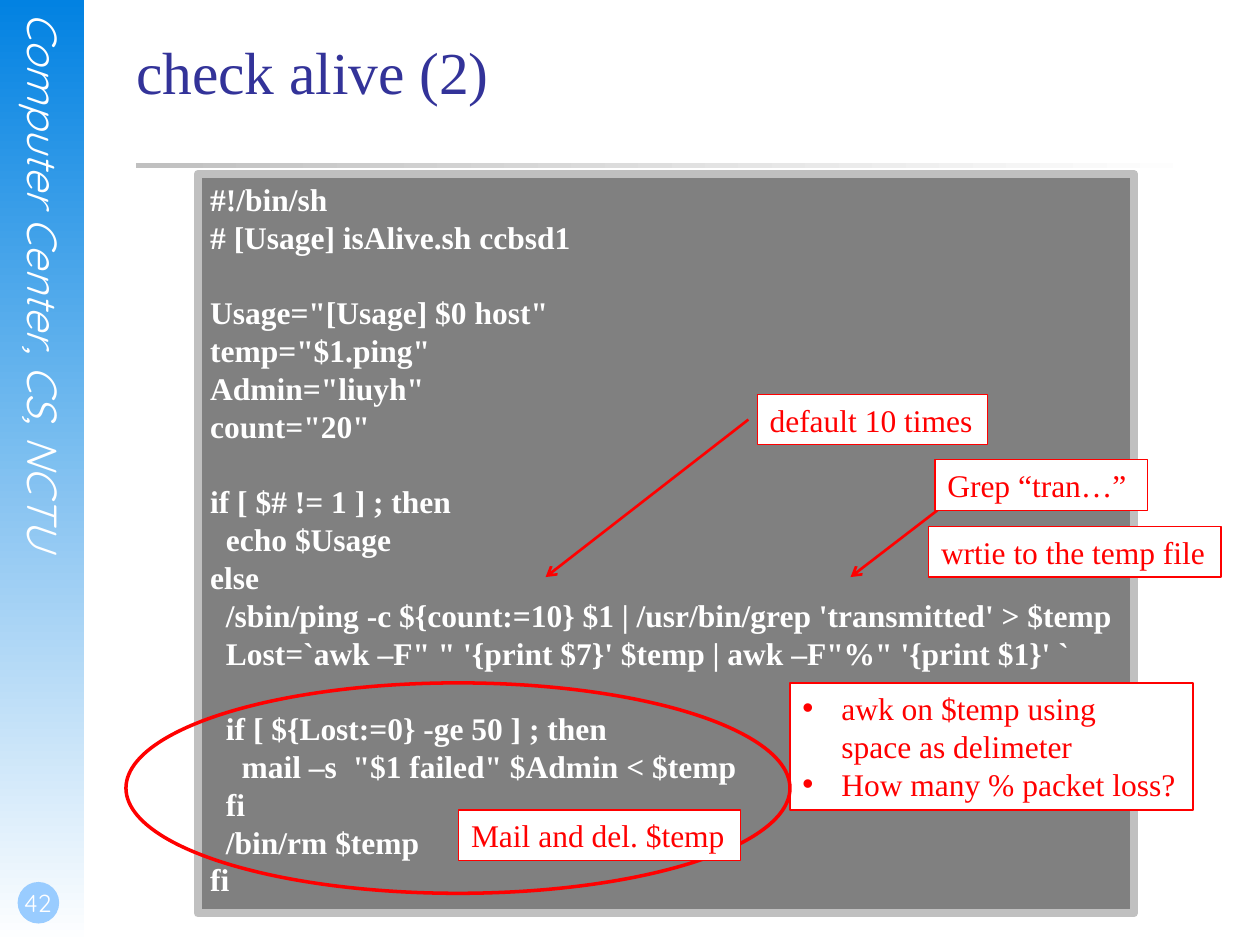
from lxml.etree import SubElement
from pptx import Presentation
from pptx.dml.color import RGBColor
from pptx.enum.shapes import MSO_CONNECTOR, MSO_SHAPE
from pptx.enum.text import MSO_ANCHOR, PP_ALIGN
from pptx.oxml.ns import qn
from pptx.util import Inches, Pt

WHITE = RGBColor(0xFF, 0xFF, 0xFF)
RED = RGBColor(0xFF, 0x00, 0x00)
BLUE = RGBColor(0x02, 0x82, 0xE2)
PALE_BLUE = RGBColor(0x99, 0xCC, 0xFF)
NAVY = RGBColor(0x33, 0x33, 0x99)
GRAY = RGBColor(0x80, 0x80, 0x80)
SILVER = RGBColor(0xC0, 0xC0, 0xC0)

SERIF, ROUNDED = "Times New Roman", "Quicksand"
LINE_PITCH = 21.6
CODE_INDENT = 0.125
BULLET_INDENT = 0.31
SIDE_INSETS = (0.1, 0.05, 0.1, 0.05)

CODE_BLOCKS = [
    [(0, "#!/bin/sh"), (0, "# [Usage] isAlive.sh ccbsd1")],
    [(0, 'Usage="[Usage] $0 host"'), (0, 'temp="$1.ping"'),
     (0, 'Admin="liuyh"'), (0, 'count="20"')],
    [(0, "if [ $# != 1 ] ; then"), (1, "echo $Usage"), (0, "else"),
     (1, "/sbin/ping -c ${count:=10} $1 | /usr/bin/grep 'transmitted' > $temp"),
     (1, "Lost=`awk –F\" \" '{print $7}' $temp | awk –F\"%\" '{print $1}' `")],
    [(1, "if [ ${Lost:=0} -ge 50 ] ; then"),
     (2, 'mail –s  "$1 failed" $Admin < $temp'),
     (1, "fi"), (1, "/bin/rm $temp"), (0, "fi")],
]


def write_text(shape, text, size=18, font=SERIF, color=RED, bold=False, italic=False,
               align=PP_ALIGN.LEFT, anchor=MSO_ANCHOR.TOP, insets=SIDE_INSETS,
               wrap=False, pitch=None):
    """Fill a shape with formatted paragraphs, one for each line of text."""
    frame = shape.text_frame
    frame.word_wrap = wrap
    frame.vertical_anchor = anchor
    (frame.margin_left, frame.margin_top,
     frame.margin_right, frame.margin_bottom) = map(Inches, insets)
    frame.text = text
    for paragraph in frame.paragraphs:
        paragraph.alignment = align
        if pitch:
            paragraph.line_spacing = Pt(pitch)
        for run in paragraph.runs:
            run.font.name, run.font.size = font, Pt(size)
            run.font.bold, run.font.italic = bold, italic
            run.font.color.rgb = color
    return frame


def add_panel(slide, box, kind=MSO_SHAPE.RECTANGLE, fill=None, line=None, weight=0.75):
    """Add a preset shape with a solid fill and outline, or without them."""
    panel = slide.shapes.add_shape(kind, *map(Inches, box))
    panel.shadow.inherit = False
    if fill is None:
        panel.fill.background()
    else:
        panel.fill.solid()
        panel.fill.fore_color.rgb = fill
    if line is None:
        panel.line.fill.background()
    else:
        panel.line.color.rgb = line
        panel.line.width = Pt(weight)
    return panel


def add_fade(slide, box, start, angle):
    """Add a borderless rectangle that fades from a colour to white."""
    band = add_panel(slide, box)
    band.fill.gradient()
    band.fill.gradient_angle = angle
    for stop, color in zip(band.fill.gradient_stops, (start, WHITE)):
        stop.color.rgb = color


def add_arrow(slide, start, end):
    """Add a red line with an open arrowhead at its end."""
    arrow = slide.shapes.add_connector(MSO_CONNECTOR.STRAIGHT, *map(Inches, start + end))
    arrow.line.color.rgb = RED
    arrow.line.width = Pt(1.5)
    SubElement(arrow.line._get_or_add_ln(), qn("a:tailEnd"), type="arrow")
    SubElement(arrow._element.spPr, qn("a:effectLst"))


def add_sidebar(slide, left, top, width, height):
    """Add the fading sidebar with the vertical course name and page number."""
    add_fade(slide, (left, top, width, height), BLUE, 270)
    name_box = (left + 0.15, top + 0.1, 0.4, 5.11)
    name = slide.shapes.add_textbox(*map(Inches, name_box))
    frame = write_text(name, "Computer Center, CS, NCTU", 24, ROUNDED, WHITE,
                       italic=True, insets=(0, 0, 0, 0), wrap=True)
    frame._txBody.bodyPr.set("vert", "eaVert")
    bottom = top + height
    add_panel(slide, (left + 0.14, bottom - 0.5, 0.33, 0.33), MSO_SHAPE.OVAL, PALE_BLUE)
    number_box = (left, bottom - 0.67, 0.58, 0.5)
    number = slide.shapes.add_textbox(*map(Inches, number_box))
    write_text(number, "42", 14, ROUNDED, WHITE, align=PP_ALIGN.CENTER,
               anchor=MSO_ANCHOR.BOTTOM, insets=(0.02, 0, 0, 0.05), wrap=True)


def add_heading(slide, left, top, width, height):
    """Add the title and the fading rule below it."""
    add_fade(slide, (left, top + 1.01, width, 0.04), SILVER, 0)
    title = slide.shapes.add_textbox(*map(Inches, (left, top, width, height)))
    write_text(title, "check alive (2)", 34, color=NAVY, insets=(0, 0, 0, 0), wrap=True)


def add_code(slide, left, top, width, height):
    """Add the script listing, with a line's gap between its blocks."""
    listing = add_panel(slide, (left, top, width, height), fill=GRAY, line=SILVER, weight=4.5)
    lines = [(level, code, block > 0 and row == 0)
             for block, rows in enumerate(CODE_BLOCKS)
             for row, (level, code) in enumerate(rows)]
    frame = write_text(listing, "\n".join(code for _, code, _ in lines),
                       color=WHITE, bold=True, pitch=LINE_PITCH)
    for paragraph, (level, _, opens_block) in zip(frame.paragraphs, lines):
        paragraph._p.get_or_add_pPr().set("marL", str(Inches(level * CODE_INDENT)))
        if opens_block:
            paragraph.space_before = Pt(LINE_PITCH)


def add_callout(slide, text, left, top, width, height=0.4, bulleted=False):
    """Add a white note with a red outline and red text."""
    note = add_panel(slide, (left, top, width, height), fill=WHITE, line=RED)
    frame = write_text(note, text, pitch=LINE_PITCH)
    if bulleted:
        for paragraph in frame.paragraphs:
            properties = paragraph._p.get_or_add_pPr()
            properties.set("marL", str(Inches(BULLET_INDENT)))
            properties.set("indent", str(-Inches(BULLET_INDENT)))
            SubElement(properties, qn("a:buFont"), typeface="Arial")
            SubElement(properties, qn("a:buChar"), char="•")


def add_annotations(slide, left, top):
    """Add the arrows, notes and ellipse that explain the listing."""
    add_arrow(slide, (left + 4.94, top + 0.2), (left + 3.33, top + 1.45))
    add_callout(slide, "default 10 times", left + 5.01, top, 1.83)
    add_arrow(slide, (left + 6.44, top + 0.92), (left + 5.75, top + 1.45))
    add_callout(slide, "Grep “tran…”", left + 6.42, top + 0.52, 1.69)
    add_callout(slide, "wrtie to the temp file", left + 6.37, top + 1.05, 2.32)
    add_callout(slide, "awk on $temp using\vspace as delimeter\nHow many % packet loss?",
                left + 5.27, top + 2.29, 3.2, 1.01, bulleted=True)
    add_panel(slide, (left, top + 2.29, 5.27, 1.67), MSO_SHAPE.OVAL, line=RED, weight=2)
    add_callout(slide, "Mail and del. $temp", left + 2.64, top + 3.3, 2.24)


def main():
    """Build the slide and save it."""
    deck = Presentation()
    deck.slide_width, deck.slide_height = Inches(10), Inches(7.5)
    slide = deck.slides.add_slide(deck.slide_layouts[6])
    add_sidebar(slide, 0, 0, 0.67, 7.5)
    add_heading(slide, 1.08, 0.28, 8.5, 1.25)
    add_code(slide, 1.57, 1.38, 7.43, 5.87)
    add_annotations(slide, 1, 3.13)
    deck.save("out.pptx")


if __name__ == "__main__":
    main()
